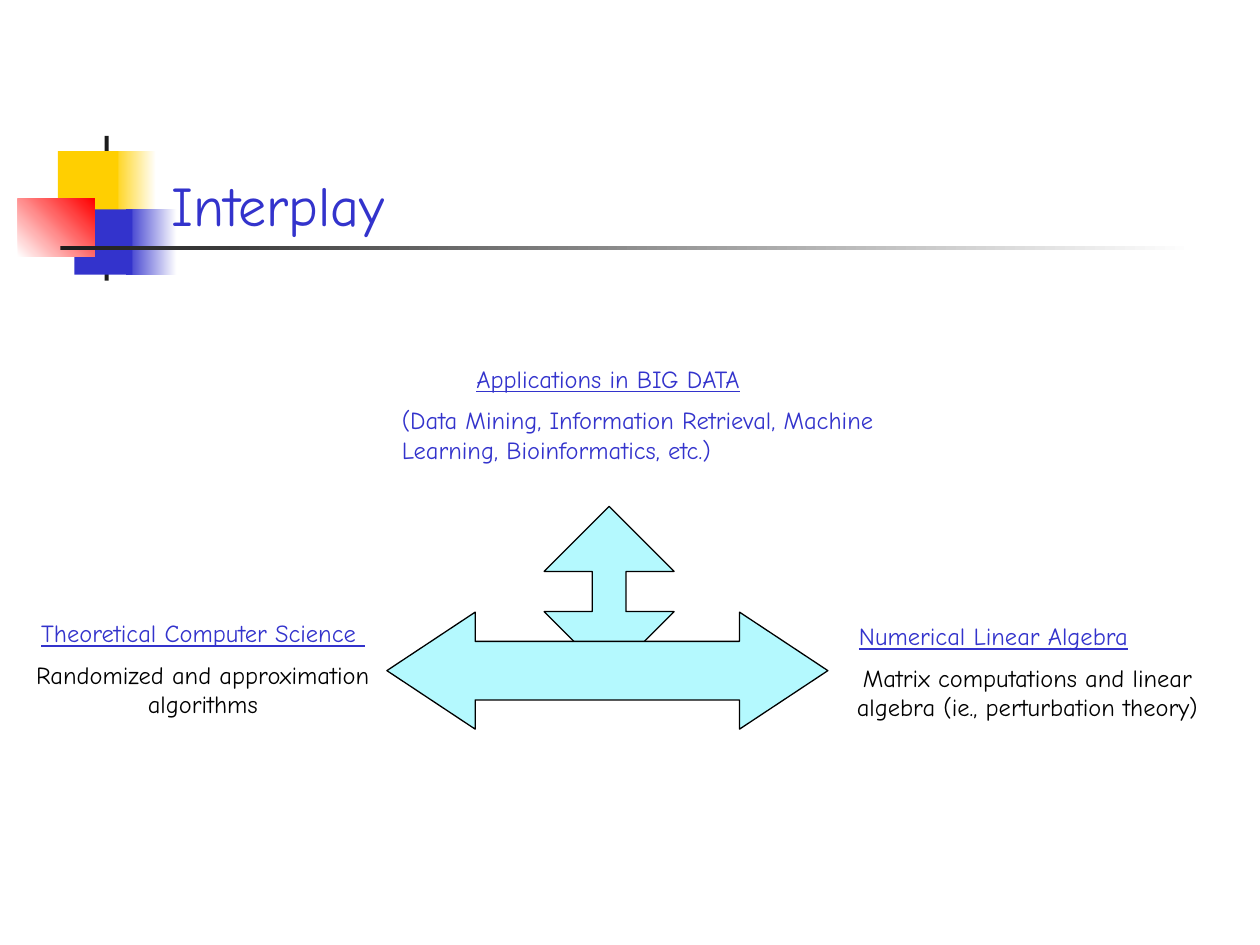
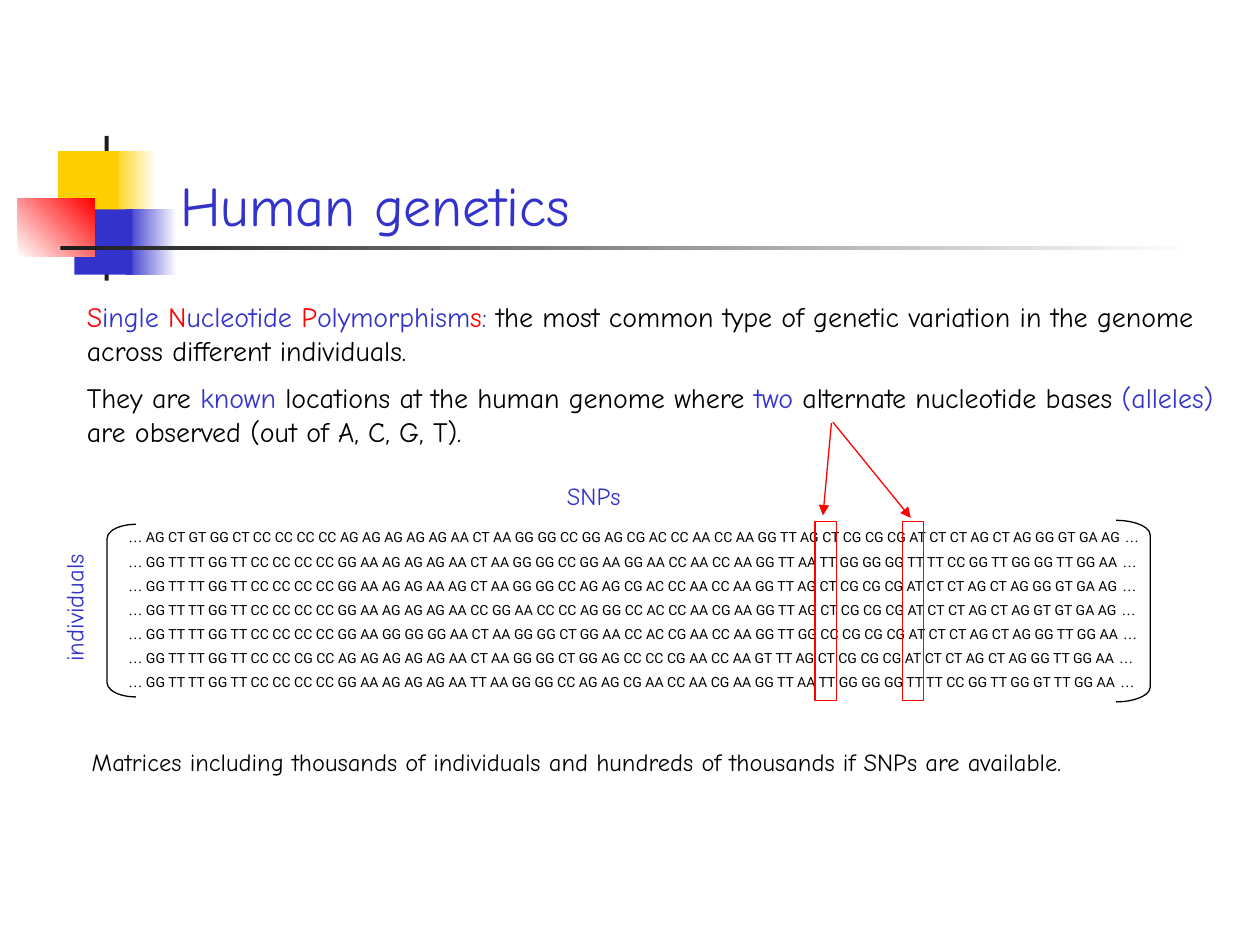
from lxml.etree import SubElement
from pptx import Presentation
from pptx.dml.color import RGBColor
from pptx.enum.shapes import MSO_CONNECTOR as CONN, MSO_SHAPE as SHAPE
from pptx.enum.text import MSO_ANCHOR as ANCHOR, PP_ALIGN as ALIGN
from pptx.oxml.ns import qn
from pptx.util import Cm, Pt

BLUE = RGBColor(0x33, 0x33, 0xCC)
YELLOW = RGBColor(0xFF, 0xCF, 0x01)
RED = RGBColor(0xFF, 0x00, 0x00)
CYAN = RGBColor(0xB4, 0xF9, 0xFE)
DARK = RGBColor(0x1C, 0x1C, 0x1C)
BLACK = RGBColor(0x00, 0x00, 0x00)
WHITE = RGBColor(0xFF, 0xFF, 0xFF)

GENOTYPES = [
    "AG CT GT GG CT CC CC CC CC AG AG AG AG AG AA CT AA GG GG CC GG AG CG AC CC AA CC AA GG TT AG CT CG CG CG AT CT CT AG CT AG GG GT GA AG",
    "GG TT TT GG TT CC CC CC CC GG AA AG AG AG AA CT AA GG GG CC GG AA GG AA CC AA CC AA GG TT AA TT GG GG GG TT TT CC GG TT GG GG TT GG AA",
    "GG TT TT GG TT CC CC CC CC GG AA AG AG AA AG CT AA GG GG CC AG AG CG AC CC AA CC AA GG TT AG CT CG CG CG AT CT CT AG CT AG GG GT GA AG",
    "GG TT TT GG TT CC CC CC CC GG AA AG AG AG AA CC GG AA CC CC AG GG CC AC CC AA CG AA GG TT AG CT CG CG CG AT CT CT AG CT AG GT GT GA AG",
    "GG TT TT GG TT CC CC CC CC GG AA GG GG GG AA CT AA GG GG CT GG AA CC AC CG AA CC AA GG TT GG CC CG CG CG AT CT CT AG CT AG GG TT GG AA",
    "GG TT TT GG TT CC CC CG CC AG AG AG AG AG AA CT AA GG GG CT GG AG CC CC CG AA CC AA GT TT AG CT CG CG CG AT CT CT AG CT AG GG TT GG AA",
    "GG TT TT GG TT CC CC CC CC GG AA AG AG AG AA TT AA GG GG CC AG AG CG AA CC AA CG AA GG TT AA TT GG GG GG TT TT CC GG TT GG GT TT GG AA",
]


class Deck:
    font = "Comic Neue"
    line_width = Pt(0.75)

    def __init__(self):
        self.prs = Presentation()
        self.prs.slide_width, self.prs.slide_height = Cm(25.4), Cm(19.05)

    def slide(self, title, left):
        self.s = self.prs.slides.add_slide(self.prs.slide_layouts[6])
        self.shape((2.24, 3.05, 0.91, 1.32), fill=(YELLOW, WHITE))
        self.shape((2.54, 4.22, 1.02, 1.32), fill=(BLUE, WHITE))
        self.shape((2.11, 2.74, 0.08, 2.92), fill=DARK)
        self.shape((1.17, 3.05, 1.22, 1.32), fill=YELLOW)
        self.shape((1.5, 4.22, 1.17, 1.32), fill=BLUE)
        self.shape((0.36, 4.01, 1.55, 1.17), fill=(WHITE, RED), angle=45)
        self.shape((1.22, 4.95, 22.86, 0.09), fill=(DARK, WHITE))
        self.text((left, 1.73, 21.64, 3.18), [title], size=32, anchor=ANCHOR.BOTTOM)

    def shape(self, box, kind=SHAPE.RECTANGLE, fill=None, line=None, angle=0, adj=()):
        sp = self.s.shapes.add_shape(kind, *map(Cm, box))
        sp.shadow.inherit = False
        for i, value in enumerate(adj):
            sp.adjustments[i] = value
        if fill is None:
            sp.fill.background()
        elif isinstance(fill, RGBColor):
            sp.fill.solid()
            sp.fill.fore_color.rgb = fill
        else:
            sp.fill.gradient()
            sp.fill.gradient_angle = angle
            for stop, color in zip(sp.fill.gradient_stops, fill):
                stop.color.rgb = color
        if line is None:
            sp.line.fill.background()
        else:
            sp.line.color.rgb = line
            sp.line.width = self.line_width

    def arrow(self, start, end, color):
        c = self.s.shapes.add_connector(CONN.STRAIGHT, *map(Cm, start + end))
        c.line.color.rgb = color
        c.line.width = self.line_width
        SubElement(c.line._get_or_add_ln(), qn("a:tailEnd"), type="triangle")
        SubElement(c._element.spPr, qn("a:effectLst"))

    def text(self, box, paras, size=14, color=BLUE, align=ALIGN.LEFT, indent=0,
             gap=0, anchor=ANCHOR.TOP, wrap=True, vert=None):
        tf = self.s.shapes.add_textbox(*map(Cm, box)).text_frame
        tf.word_wrap = wrap
        tf.vertical_anchor = anchor
        if vert:
            tf._txBody.bodyPr.set("vert", vert)
        for i, runs in enumerate(paras):
            p = tf.paragraphs[0] if i == 0 else tf.add_paragraph()
            self.format_paragraph(p, align, indent, gap if i else 0)
            for run in [(runs, {})] if isinstance(runs, str) else runs:
                self.add_run(p, run[0], **{"size": size, "color": color, **run[1]})
        return tf

    def format_paragraph(self, p, align, indent, gap):
        p.alignment = align
        p.space_before = Pt(gap)
        p._p.get_or_add_pPr().set("marL", str(Cm(indent)))

    def add_run(self, p, text, size, color, font=None, underline=False):
        r = p.add_run()
        r.text = text
        r.font.size = Pt(size)
        r.font.name = font or self.font
        r.font.color.rgb = color
        r.font.underline = underline

    def field(self, box, heading, detail, color=BLACK, align=ALIGN.CENTER, indent=0):
        tf = self.text(box, [[(heading, {"underline": True})], [(detail, {"color": color})]],
                       align=ALIGN.CENTER, gap=7)
        self.format_paragraph(tf.paragraphs[1], align, indent, 7)


def interplay(deck):
    deck.slide("Interplay", 3.2)
    deck.field((0.05, 12.34, 8.08, 2.36), "Theoretical Computer Science ",
               "Randomized and approximation algorithms")
    deck.field((15.04, 12.4, 9.98, 2.36), "Numerical Linear Algebra",
               "Matrix computations and linear algebra (ie., perturbation theory)", indent=1.37)
    deck.field((6.48, 7.21, 11.56, 2.36), "Applications in BIG DATA",
               "(Data Mining, Information Retrieval, Machine Learning, Bioinformatics, etc.)",
               color=BLUE, align=ALIGN.LEFT, indent=1.37)
    deck.shape((10.97, 10.21, 2.62, 3.43), SHAPE.UP_DOWN_ARROW, CYAN, BLACK, adj=(0.5, 0.26))
    deck.shape((7.8, 12.34, 8.89, 2.36), SHAPE.LEFT_RIGHT_ARROW, CYAN, BLACK, adj=(0.5, 0.755))


def human_genetics(deck):
    red, blue = {"color": RED}, {"color": BLUE}
    times, roboto = {"font": "Times New Roman"}, {"font": "Roboto"}
    deck.slide("Human genetics", 3.38)
    deck.text((0.23, 5.92, 24.56, 3.3), [
        [("S", red), ("ingle ", blue), ("N", red), ("ucleotide ", blue), ("P", red),
         ("olymorphism", blue), ("s", red), (":", blue),
         (" the most common type of genetic variation in the genome across different individuals.", {})],
        [("They are ", {}), ("known", blue), (" locations at the human genome where", {}),
         (" two", blue), (" alternate nucleotide bases ", {}), ("(alleles)", blue),
         (" are observed (out of A, C, G, T).", {})],
    ], size=16, color=BLACK, indent=1.27, gap=8)
    deck.text((11.18, 9.58, 1.75, 0.84), ["SNPs"], wrap=False)
    deck.shape((2.16, 10.57, 0.58, 3.48), SHAPE.LEFT_BRACKET, line=BLACK, adj=(0.49,))
    deck.shape((22.5, 10.49, 0.69, 3.66), SHAPE.RIGHT_BRACKET, line=BLACK, adj=(0.44,))
    deck.text((1.07, 10.92, 1.09, 2.67), ["individuals"], vert="vert270")
    deck.text((2.34, 10.54, 21.11, 3.66),
              [[("…", times), (f" {row} ", roboto), ("…", times)] for row in GENOTYPES],
              size=8, color=BLACK, gap=4.2)
    deck.text((0.33, 14.94, 24.1, 0.84),
              ["Matrices including thousands of individuals and hundreds of thousands if SNPs are available."],
              color=BLACK, indent=1.27)
    for left in (16.43, 18.19):
        deck.shape((left, 10.52, 0.43, 3.61), line=RED)
    deck.arrow((16.76, 8.53), (16.59, 10.39), RED)
    deck.arrow((16.79, 8.51), (18.36, 10.44), RED)


def main():
    deck = Deck()
    interplay(deck)
    human_genetics(deck)
    deck.prs.save("out.pptx")


if __name__ == "__main__":
    main()
